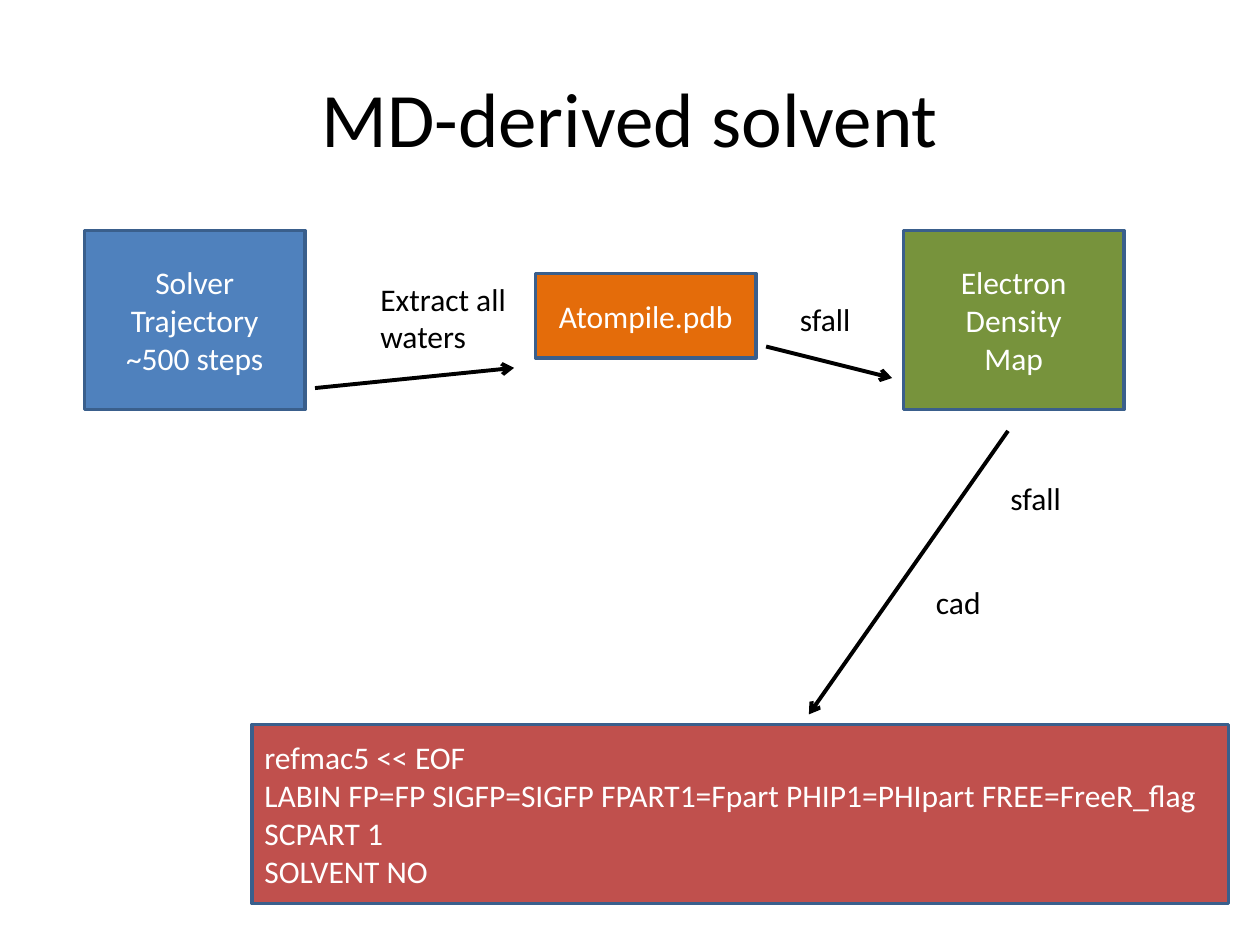
from lxml import etree
from pptx import Presentation
from pptx.dml.color import RGBColor
from pptx.enum.shapes import MSO_CONNECTOR, MSO_SHAPE
from pptx.enum.text import MSO_ANCHOR, MSO_AUTO_SIZE, PP_ALIGN
from pptx.oxml.ns import qn
from pptx.util import Inches, Pt

BLACK, WHITE, OUTLINE = "000000", "FFFFFF", "3A5F8C"


def color(hex_string):
    return RGBColor.from_string(hex_string)


def write_lines(text_frame, lines, size, hex_color, align):
    for index, line in enumerate(lines):
        paragraph = text_frame.paragraphs[0] if index == 0 else text_frame.add_paragraph()
        paragraph.text = line
        paragraph.alignment = align
        paragraph.font.name = "Calibri"
        paragraph.font.size = Pt(size)
        paragraph.font.color.rgb = color(hex_color)


def add_title(slide, box, text):
    text_frame = slide.shapes.add_textbox(*map(Inches, box)).text_frame
    text_frame.word_wrap = True
    text_frame.vertical_anchor = MSO_ANCHOR.MIDDLE
    write_lines(text_frame, [text], 44, BLACK, PP_ALIGN.CENTER)


def add_step(slide, box, lines, fill, align=PP_ALIGN.CENTER):
    shape = slide.shapes.add_shape(MSO_SHAPE.RECTANGLE, *map(Inches, box))
    shape.shadow.inherit = False
    shape.fill.solid()
    shape.fill.fore_color.rgb = color(fill)
    shape.line.color.rgb = color(OUTLINE)
    shape.line.width = Pt(2)
    shape.text_frame.word_wrap = True
    shape.text_frame.vertical_anchor = MSO_ANCHOR.MIDDLE
    write_lines(shape.text_frame, lines, 18, WHITE, align)


def add_label(slide, box, lines):
    text_frame = slide.shapes.add_textbox(*map(Inches, box)).text_frame
    text_frame.word_wrap = False
    text_frame.auto_size = MSO_AUTO_SIZE.SHAPE_TO_FIT_TEXT
    write_lines(text_frame, lines, 18, BLACK, PP_ALIGN.LEFT)


def add_arrow(slide, start, end):
    connector = slide.shapes.add_connector(
        MSO_CONNECTOR.STRAIGHT, *map(Inches, start + end))
    connector.line.color.rgb = color(BLACK)
    connector.line.width = Pt(2.25)
    properties = connector._element.spPr
    etree.SubElement(properties.find(qn("a:ln")), qn("a:tailEnd"), type="arrow")
    etree.SubElement(properties, qn("a:effectLst"))


def add_workflow(slide, left, top):
    """Draw the steps, labels and arrows relative to the top left corner."""
    width, height = 1.75, 1.42

    # Steps
    add_step(slide, (left, top, width, height),
             ["Solver", "Trajectory", "~500 steps"], "4F81BD")
    add_step(slide, (left + 3.58, top + 0.34, width, 0.67), ["Atompile.pdb"], "E46C0A")
    add_step(slide, (left + 6.5, top, width, height),
             ["Electron", "Density", "Map"], "77933C")
    add_step(slide, (left + 1.33, top + 3.92, 7.75, height),
             ["refmac5 << EOF",
              "LABIN FP=FP SIGFP=SIGFP FPART1=Fpart PHIP1=PHIpart FREE=FreeR_flag",
              "SCPART 1",
              "SOLVENT NO"], "C0504D", PP_ALIGN.LEFT)

    # Labels beside the arrows
    for x, y, label_width, label_height, lines in [
        (2.25, 0.34, 1.21, 0.71, ["Extract all", "waters"]),
        (5.58, 0.5, 0.61, 0.4, ["sfall"]),
        (7.25, 1.92, 0.61, 0.4, ["sfall"]),
        (6.66, 2.75, 0.56, 0.4, ["cad"]),
    ]:
        add_label(slide, (left + x, top + y, label_width, label_height), lines)

    # Arrows
    for start_x, start_y, end_x, end_y in [
        (1.83, 1.25, 3.41, 1.09),
        (5.41, 0.92, 6.41, 1.17),
        (7.33, 1.59, 5.75, 3.84),
    ]:
        add_arrow(slide, (left + start_x, top + start_y), (left + end_x, top + end_y))


def main():
    presentation = Presentation()
    presentation.slide_width, presentation.slide_height = Inches(10), Inches(7.5)
    slide = presentation.slides.add_slide(presentation.slide_layouts[6])
    add_title(slide, (0.5, 0.3, 9, 1.25), "MD-derived solvent")
    add_workflow(slide, 0.67, 1.83)
    presentation.save("out.pptx")


if __name__ == "__main__":
    main()
